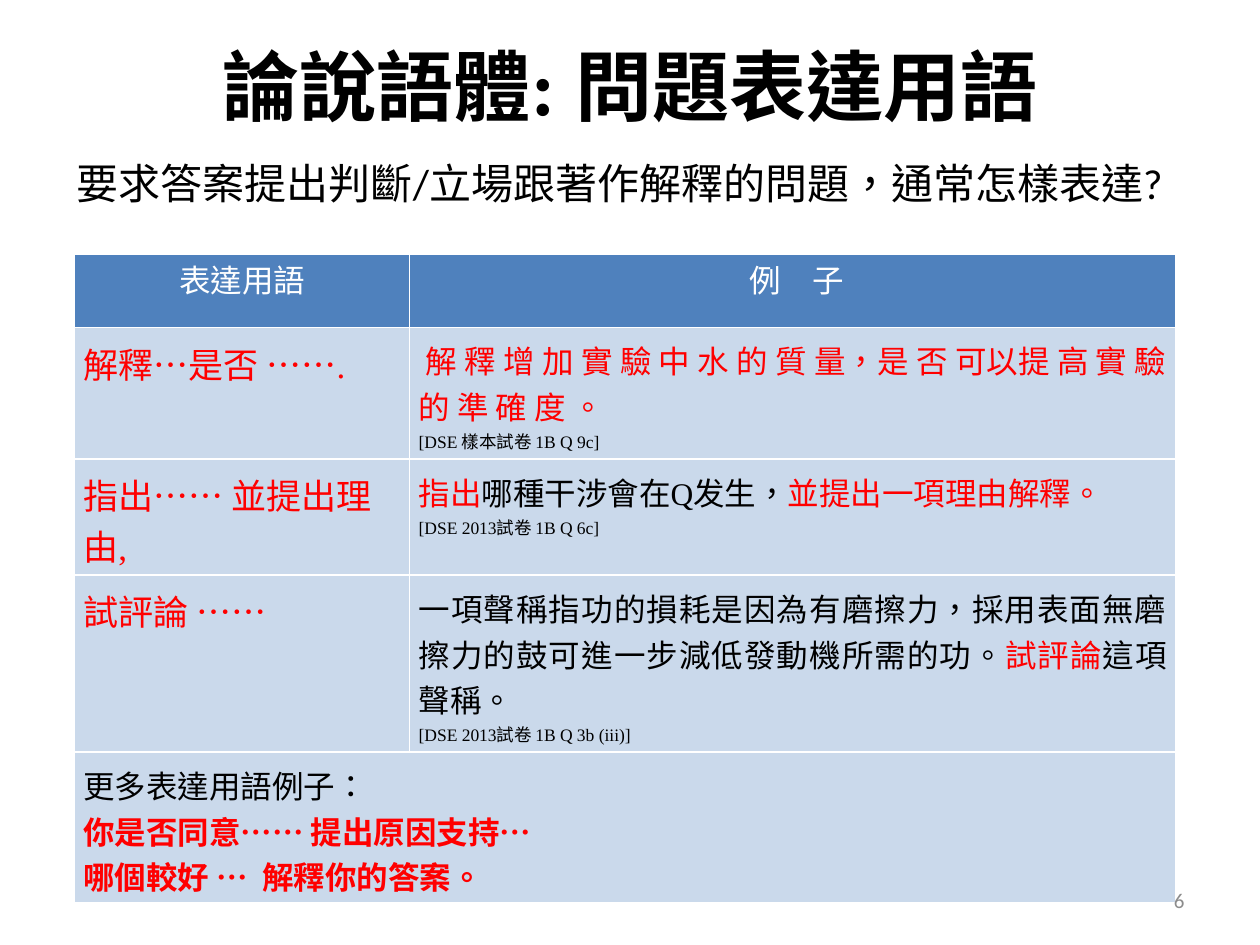
from lxml.etree import SubElement
from pptx import Presentation
from pptx.dml.color import RGBColor
from pptx.enum.lang import MSO_LANGUAGE_ID
from pptx.enum.text import MSO_ANCHOR, PP_ALIGN
from pptx.oxml import parse_xml
from pptx.oxml.ns import nsdecls, qn
from pptx.util import Cm, Pt

BLACK, WHITE, RED, GRAY = "000000", "FFFFFF", "FF0000", "8C8C8C"
HEAD, BODY = "4F81BD", "CAD9EB"
SANS, SERIF = "Calibri", "Times New Roman"
LEFT, MID, RIGHT, JUST = (PP_ALIGN.LEFT, PP_ALIGN.CENTER,
                          PP_ALIGN.RIGHT, PP_ALIGN.JUSTIFY)


def color(code):
    return RGBColor.from_string(code)


def write(frame, paras, align=LEFT):
    """Each paragraph is a list of runs: (text, size, colour, font, bold)."""
    for i, runs in enumerate(paras):
        para = frame.paragraphs[0] if i == 0 else frame.add_paragraph()
        para.alignment = align
        for text, size, tint, name, bold in runs:
            run = para.add_run()
            run.text = text
            font = run.font
            font.size, font.name, font.bold = Pt(size), name, bold
            font.color.rgb = color(tint)
            font.language_id = MSO_LANGUAGE_ID.TRADITIONAL_CHINESE


def add_text(slide, box, runs, align=LEFT, anchor=MSO_ANCHOR.MIDDLE):
    shape = slide.shapes.add_textbox(*map(Cm, box))
    frame = shape.text_frame
    frame.word_wrap = True
    frame.vertical_anchor = anchor
    write(frame, [runs], align)
    return frame


def style(cell, fill, top, foot):
    """Set margins, fill and thin white borders."""
    cell.margin_left = cell.margin_right = Cm(0.18)
    cell.margin_top, cell.margin_bottom = Cm(top), Cm(foot)
    cell.fill.solid()
    cell.fill.fore_color.rgb = color(fill)
    props = cell._tc.get_or_add_tcPr()
    for i, side in enumerate("LRTB"):
        line = parse_xml(f'<a:ln{side} {nsdecls("a")} w="{Pt(1)}"/>')
        tint = SubElement(SubElement(line, qn("a:solidFill")), qn("a:srgbClr"))
        tint.set("val", WHITE)
        props.insert(i, line)


def add_grid(slide, box, widths, heights, heads, rows, more):
    count = len(heights)
    table = slide.shapes.add_table(count, len(widths), *map(Cm, box)).table
    for col, width in zip(table.columns, widths):
        col.width = Cm(width)
    for row, height in zip(table.rows, heights):
        row.height = Cm(height)

    # Header row
    for cell, text in zip(table.rows[0].cells, heads):
        style(cell, HEAD, 0, 0)
        cell.vertical_anchor = MSO_ANCHOR.MIDDLE
        write(cell.text_frame, [[(text, 18, WHITE, SANS, False)]], MID)
        cell.text_frame.paragraphs[0].line_spacing = Pt(12)

    # Body rows: phrase, then example with its source
    for r in range(1, count):
        for cell in table.rows[r].cells:
            style(cell, BODY, 0.2, 0.1)
    for r, (phrase, parts, origin) in enumerate(rows, 1):
        write(table.cell(r, 0).text_frame,
              [[(phrase, 20, RED, SERIF, False)]])
        runs = [(text, 18, tint, SERIF, False) for text, tint in parts]
        write(table.cell(r, 1).text_frame,
              [runs, [(origin, 10, BLACK, SERIF, False)]], JUST)

    # Last row spans the table
    last = table.cell(count - 1, 0)
    last.merge(table.cell(count - 1, len(widths) - 1))
    write(last.text_frame, more)


def main():
    deck = Presentation()
    deck.slide_width, deck.slide_height = Cm(25.4), Cm(19.05)
    slide = deck.slides.add_slide(deck.slide_layouts[6])

    # Title
    add_text(slide, (1.27, 0.13, 22.86, 3.17),
             [("論說語體", 44, BLACK, SANS, True),
              (": 問題表達用語", 44, BLACK, SERIF, True)], MID)

    # Table of phrases
    rows = [
        ("解釋…是否 …….",
         [(" 解 釋 增 加 實 驗 中 水 的 質 量，是 否 可以提 高 實 驗 的 準 確 度 。",
           RED)],
         "[DSE 樣本試卷 1B Q 9c]"),
        ("指出…… 並提出理由,",
         [("指出", RED), ("哪種干涉會在Q发生，", BLACK),
          ("並提出一項理由解釋。", RED)],
         "[DSE 2013試卷 1B Q 6c]"),
        ("試評論 ……",
         [("一項聲稱指功的損耗是因為有磨擦力，採用表面無磨擦力的鼓可進一步"
           "減低發動機所需的功。", BLACK),
          ("試評論", RED), ("這項聲稱。", BLACK)],
         "[DSE 2013試卷 1B Q 3b (iii)]"),
    ]
    more = [
        [("更多", 18, BLACK, SERIF, False),
         ("表達用語例子：", 18, BLACK, SANS, False)],
        [("你是否同意…… 提出原因支持…", 18, RED, SANS, True)],
        [("哪個較好 …  解釋你的答案。", 18, RED, SERIF, True)],
    ]
    add_grid(slide, (1.5, 5.13, 22.2, 13.07), (6.76, 15.44),
             (1.47, 2.65, 2.34, 3.57, 3.04), ("表達用語", " 例　子"),
             rows, more)

    # Page number
    add_text(slide, (18.2, 17.65, 5.93, 1.01),
             [("6", 12, GRAY, SANS, False)], RIGHT)

    # Question under the title
    frame = add_text(slide, (1.3, 3.05, 22.8, 1.28),
                     [("要求答案提出判斷/立場跟著作解釋的問題，通常怎樣表達?",
                       24, BLACK, SANS, False)], anchor=MSO_ANCHOR.TOP)
    frame.margin_right = 0

    deck.save("out.pptx")


if __name__ == "__main__":
    main()
